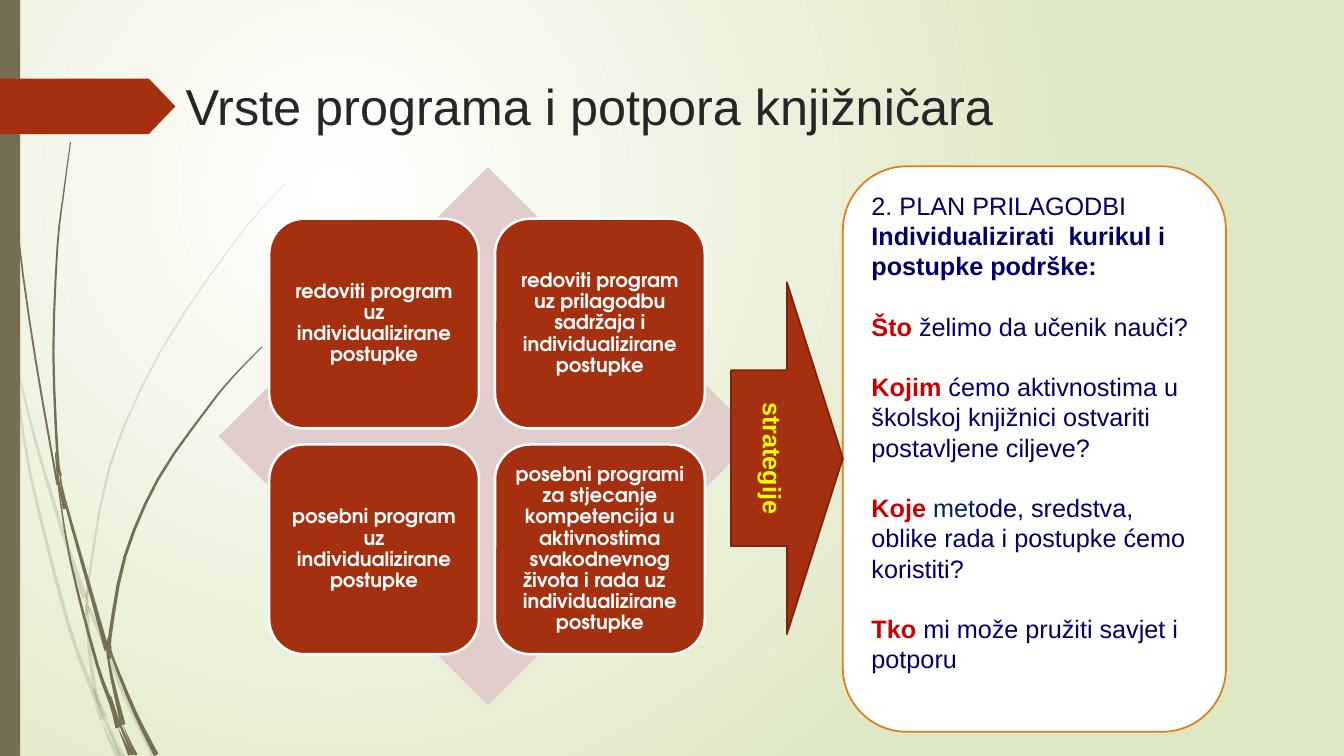
import math

from lxml import etree
from pptx import Presentation
from pptx.dml.color import RGBColor
from pptx.enum.shapes import MSO_SHAPE
from pptx.enum.text import MSO_ANCHOR, PP_ALIGN
from pptx.oxml.ns import qn
from pptx.util import Inches, Pt

RECT, ROUND_RECT = MSO_SHAPE.RECTANGLE, MSO_SHAPE.ROUNDED_RECTANGLE
PENTAGON, DIAMOND, RIGHT_ARROW = MSO_SHAPE.PENTAGON, MSO_SHAPE.DIAMOND, MSO_SHAPE.RIGHT_ARROW
LEFT, CENTER = PP_ALIGN.LEFT, PP_ALIGN.CENTER
TOP, MIDDLE = MSO_ANCHOR.TOP, MSO_ANCHOR.MIDDLE

WHITE = RGBColor(0xFF, 0xFF, 0xFF)
PALE_GREEN = RGBColor(0xDF, 0xE8, 0xC4)
OLIVE = RGBColor(0x76, 0x6F, 0x54)
BRICK = RGBColor(0xA5, 0x30, 0x10)
DARK_BRICK = RGBColor(0x7A, 0x24, 0x0C)
PINK = RGBColor(0xE1, 0xCD, 0xCC)
ORANGE = RGBColor(0xDE, 0x7E, 0x18)
CHARCOAL = RGBColor(0x26, 0x26, 0x26)
NAVY = RGBColor(0x00, 0x00, 0x66)
BLUE = RGBColor(0x00, 0x20, 0x60)
RED = RGBColor(0xCC, 0x00, 0x00)
YELLOW = RGBColor(0xFF, 0xFF, 0x00)

BODY_FONT, CARD_FONT = "Arial", "TeX Gyre Adventor"

# Grass blades: width at the tip, width at the root, centre line
PALE_BLADES = [
    (0.04, 0.01, [(0, 2.9), (0.06, 3.2), (0.11, 3.5)]),
    (0.01, 0.05, [(0.15, 3.55), (0.34, 4.33), (0.6, 5.21), (0.84, 5.93)]),
    (0.03, 0.05, [(0.88, 6.02), (1.25, 6.93), (1.53, 7.5)]),
    (0, 0.05, [(1.05, 7.11), (1.13, 7.33), (1.22, 7.5)]),
    (0.01, 0.05, [(0.11, 3.5), (0.16, 3.76), (0.3, 4.7), (0.68, 6.2), (0.93, 6.88), (1.01, 7.14)]),
    (0.04, 0.03, [(0.86, 5.99), (0.89, 6.46), (0.95, 6.87), (1.05, 7.11)]),
    (0, 0.03, [(3.12, 1.53), (2.68, 1.98), (2.29, 2.45), (1.59, 3.49), (1.09, 4.62),
               (0.87, 5.84), (0.87, 5.96)]),
    (0, 0.05, [(1.01, 7.14), (1.08, 7.33), (1.17, 7.5)]),
    (0.02, 0.03, [(0.87, 5.86), (0.86, 6.1)]),
    (0.02, 0.02, [(0.93, 6.83), (1.01, 7.07), (1.19, 7.5)]),
]
DARK_BLADES = [
    (0.01, 0.02, [(0.04, 0), (0.05, 0.48), (0.08, 1.1), (0.18, 2.33), (0.35, 3.55), (0.57, 4.81)]),
    (0.01, 0.05, [(0.6, 4.72), (0.64, 4.95), (0.91, 5.91), (1.06, 6.45)]),
    (0.01, 0.05, [(1.1, 6.41), (1.12, 6.53), (1.34, 7.07), (1.55, 7.49)]),
    (0.01, 0.05, [(0.57, 4.77), (0.7, 5.57), (0.96, 6.58), (1.11, 7), (1.17, 7.22)]),
    (0.01, 0.03, [(0.7, 1.41), (0.63, 1.93), (0.57, 2.45), (0.53, 3.49), (0.57, 4.51), (0.6, 4.72)]),
    (0, 0.03, [(1.22, 7.19), (1.28, 7.34), (1.35, 7.49)]),
    (0.01, 0.03, [(0.55, 4.49), (0.58, 4.77), (0.64, 5.05)]),
    (0.01, 0.04, [(2.6, 3.44), (2.31, 3.74), (2.05, 4.06), (1.57, 4.75), (1.24, 5.52),
                  (1.09, 6.32), (1.1, 6.41)]),
    (0, 0.04, [(1.17, 7.22), (1.29, 7.49)]),
    (0.01, 0.05, [(1.06, 6.45), (1.11, 6.73), (1.22, 7.19)]),
    (0.03, 0.04, [(1.08, 6.33), (1.08, 6.54)]),
    (0.01, 0.03, [(1.1, 6.91), (1.18, 7.16), (1.32, 7.49)]),
]

PROGRAMS = [
    "redoviti program uz individualizirane postupke",
    "redoviti program uz prilagodbu sadržaja i individualizirane postupke",
    "posebni program uz individualizirane postupke",
    "posebni programi za stjecanje kompetencija u aktivnostima svakodnevnog "
    "života i rada uz   individualizirane postupke",
]
PLAN_HEADING = [
    [("2. PLAN PRILAGODBI", NAVY, False)],
    [("Individualizirati  kurikul i postupke podrške:", NAVY, True)],
]
PLAN_QUESTIONS = [
    [("Što", RED, True), (" želimo da učenik nauči?", NAVY, False)],
    [("Kojim", RED, True),
     (" ćemo aktivnostima u školskoj knjižnici ostvariti postavljene ciljeve?", NAVY, False)],
    [("Koje ", RED, True), ("met", BLUE, False),
     ("ode, sredstva, oblike rada i postupke ćemo koristiti?", NAVY, False)],
    [("Tko", RED, True), (" mi može pružiti savjet i potporu", NAVY, False)],
]


def add_text(p, text, size=18, font=BODY_FONT, color=NAVY, bold=False):
    r = p.add_run()
    r.text = text
    r.font.size, r.font.name, r.font.bold = Pt(size), font, bold
    r.font.color.rgb = color


def smooth(points, steps=3):
    """Return Catmull-Rom samples through the points."""
    ends = [points[0], *points, points[-1]]
    curve = []
    for a, b, c, d in zip(ends, ends[1:], ends[2:], ends[3:]):
        for t in (i / steps for i in range(steps)):
            curve.append(tuple(
                b[k] + t * (c[k] - a[k]) / 2
                + t * t * (2 * a[k] - 5 * b[k] + 4 * c[k] - d[k]) / 2
                + t ** 3 * (3 * b[k] - a[k] - 3 * c[k] + d[k]) / 2 for k in (0, 1)))
    return curve + [points[-1]]


class SlideBuilder:
    """Holds the current slide and draws its elements in one style."""

    def __init__(self, slide):
        self.slide = slide

    def background(self):
        fill = self.slide.background.fill
        fill.gradient()
        for stop, color in zip(fill.gradient_stops, (WHITE, PALE_GREEN)):
            stop.color.rgb = color
        grad = self.slide.background._cSld.find(".//" + qn("a:gradFill"))
        circle = etree.Element(qn("a:path"), {"path": "circle"})
        etree.SubElement(circle, qn("a:fillToRect"), l="50000", t="50000", r="100000", b="100000")
        grad.replace(grad.find(qn("a:lin")), circle)

    def style(self, sp, fill, line=None, width=1.25):
        sp.shadow.inherit = False
        sp.fill.solid()
        sp.fill.fore_color.rgb = fill
        if line is None:
            sp.line.fill.background()
        else:
            sp.line.color.rgb, sp.line.width = line, Pt(width)

    def shape(self, kind, x, y, w, h, fill, **line):
        sp = self.slide.shapes.add_shape(kind, *map(Inches, (x, y, w, h)))
        self.style(sp, fill, **line)
        return sp

    def blade(self, tip, root, points, alpha=100):
        """Draw a tapered outline along a smoothed centre line."""
        curve = smooth(points)
        last = len(curve) - 1
        left, right = [], []
        for i, (x, y) in enumerate(curve):
            (x0, y0), (x1, y1) = curve[max(i - 1, 0)], curve[min(i + 1, last)]
            angle = math.atan2(y1 - y0, x1 - x0)
            half = (tip + (root - tip) * i / last) / 2
            dx, dy = -half * math.sin(angle), half * math.cos(angle)
            left.append((Inches(x + dx), Inches(y + dy)))
            right.append((Inches(x - dx), Inches(y - dy)))
        outline = left + right[::-1]
        builder = self.slide.shapes.build_freeform(*outline[0])
        builder.add_line_segments(outline[1:], close=True)
        sp = builder.convert_to_shape()
        self.style(sp, OLIVE)
        if alpha < 100:
            color = sp.fill._xPr.find(".//" + qn("a:srgbClr"))
            etree.SubElement(color, qn("a:alpha"), val=str(alpha * 1000))

    def title(self, text, x, y, w, h):
        sp = self.slide.shapes.title
        sp.left, sp.top, sp.width, sp.height = map(Inches, (x, y, w, h))
        tf = sp.text_frame
        tf.word_wrap, tf.vertical_anchor = True, TOP
        tf.paragraphs[0].alignment = LEFT
        add_text(tf.paragraphs[0], text, size=36, color=CHARCOAL)

    def card(self, text, x, y, side):
        tf = self.shape(ROUND_RECT, x, y, side, side, BRICK, line=WHITE, width=1.75).text_frame
        tf.word_wrap, tf.vertical_anchor = True, MIDDLE
        tf.margin_left = tf.margin_right = tf.margin_top = tf.margin_bottom = Inches(0.06)
        p = tf.paragraphs[0]
        p.alignment, p.line_spacing = CENTER, 0.9
        add_text(p, text, size=14, font=CARD_FONT, color=WHITE, bold=True)

    def plan(self, x, y, w, h):
        tf = self.shape(ROUND_RECT, x, y, w, h, WHITE, line=ORANGE).text_frame
        tf.word_wrap, tf.vertical_anchor = True, TOP
        for i, runs in enumerate(PLAN_HEADING + PLAN_QUESTIONS):
            p = tf.paragraphs[0] if i == 0 else tf.add_paragraph()
            p.alignment, p.line_spacing = LEFT, Pt(21.6)
            if runs in PLAN_QUESTIONS:
                p.space_before = Pt(21.6)
            for text, color, bold in runs:
                add_text(p, text, color=color, bold=bold)

    def arrow(self, text, x, y, w, h):
        tf = self.shape(RIGHT_ARROW, x, y, w, h, BRICK, line=DARK_BRICK).text_frame
        tf.word_wrap, tf.vertical_anchor = True, MIDDLE
        tf._txBody.bodyPr.set("vert", "vert")
        tf.paragraphs[0].alignment = CENTER
        add_text(tf.paragraphs[0], text, color=YELLOW, bold=True)


def main():
    prs = Presentation()
    prs.slide_width, prs.slide_height = Inches(13.33), Inches(7.5)
    s = SlideBuilder(prs.slides.add_slide(prs.slide_layouts[5]))
    s.background()
    for blades, alpha in ((PALE_BLADES, 20), (DARK_BLADES, 100)):
        for blade in blades:
            s.blade(*blade, alpha=alpha)
    s.shape(RECT, 0, 0, 0.2, 7.5, OLIVE)
    s.shape(PENTAGON, 0, 0.78, 1.74, 0.55, BRICK).adjustments[0] = 0.48
    s.title("Vrste programa i potpora knjižničara", 1.74, 0.69, 10.84, 1.4)
    s.shape(DIAMOND, 2.17, 1.66, 5.34, 5.34, PINK)
    for i, program in enumerate(PROGRAMS):
        row, col = divmod(i, 2)
        s.card(program, 2.67 + 2.24 * col, 2.17 + 2.24 * row, 2.08)
    s.plan(8.36, 1.65, 3.8, 5.61)
    s.arrow("strategije", 7.25, 2.8, 1.11, 3.49)
    prs.save("out.pptx")


if __name__ == "__main__":
    main()
